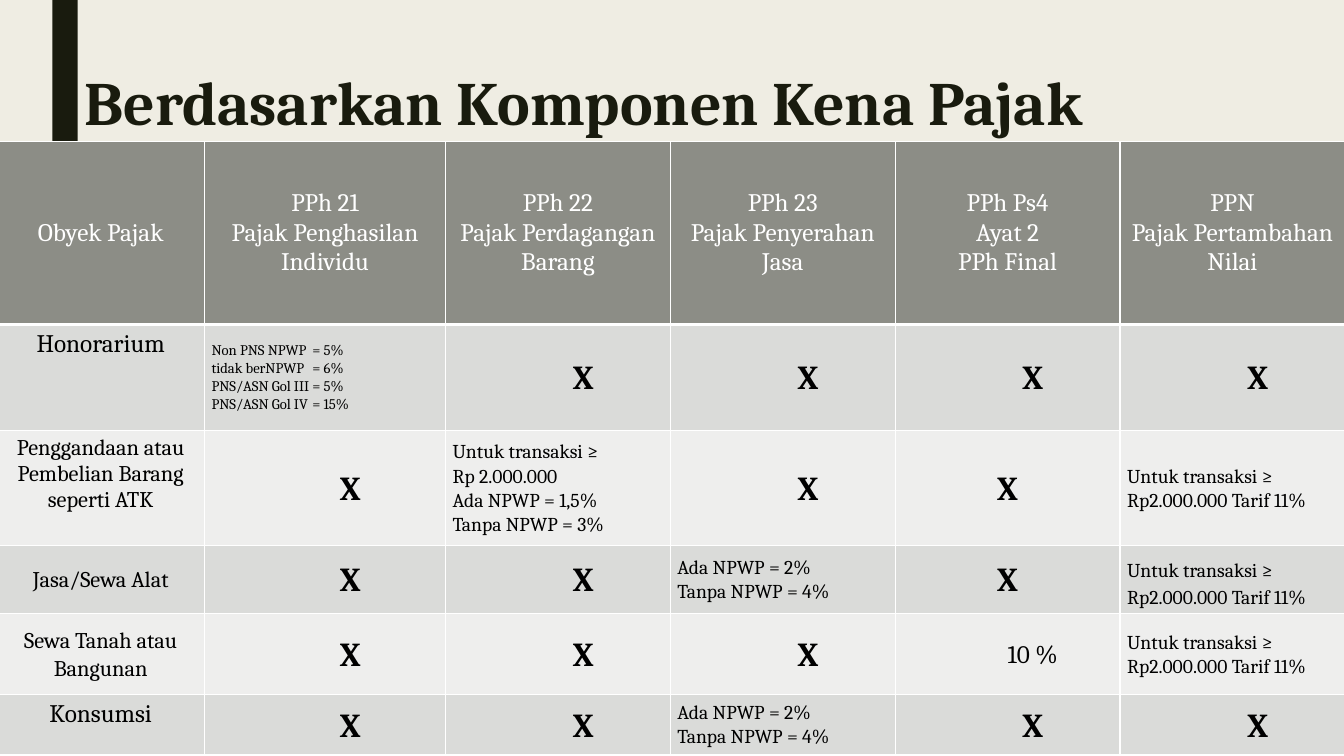
import dataclasses

import lxml.etree
import pptx
import pptx.dml.color
import pptx.enum.shapes
import pptx.enum.text
import pptx.oxml.ns
import pptx.util

RGBColor = pptx.dml.color.RGBColor
ALIGN = pptx.enum.text.PP_ALIGN
ANCHOR = pptx.enum.text.MSO_ANCHOR
qn = pptx.oxml.ns.qn

INK = RGBColor(0x19, 0x1B, 0x0E)
PAPER = RGBColor(0xEF, 0xED, 0xE3)
BLACK = RGBColor(0x00, 0x00, 0x00)
WHITE = RGBColor(0xFF, 0xFF, 0xFF)
STONE = RGBColor(0x8C, 0x8D, 0x86)
BANDS = (RGBColor(0xDA, 0xDB, 0xD9), RGBColor(0xEE, 0xEE, 0xED))

FONT = "Cambria"
WIDE = pptx.util.Inches(13.33)
HIGH = pptx.util.Inches(7.5)
COLS = (15.45, 17.93) + (16.73,) * 4
ROWS = (24.27, 14, 15.2, 9.07, 10.67, 8)
TOP = 18.67


@dataclasses.dataclass(frozen=True)
class Style:
    size: float
    color: RGBColor = BLACK
    bold: bool = False
    align: ALIGN = ALIGN.CENTER
    anchor: ANCHOR = ANCHOR.MIDDLE
    inset: tuple = (0.07, 0)
    indent: float = 0
    lead: float = 1.07


TITLE = Style(44, INK, True, ALIGN.LEFT, inset=(0.1, 0.05), lead=0.89)
HEAD = Style(18, WHITE, inset=(0.1, 0.05), lead=1)
NAME = Style(18, anchor=ANCHOR.TOP, inset=(0.1, 0.05), lead=1)
LONG = dataclasses.replace(NAME, size=16)
ITEM = Style(16, inset=(0, 0))
NOTE = Style(14, align=ALIGN.LEFT)
FINE = dataclasses.replace(NOTE, size=10.5)
MARK = Style(24, bold=True, indent=0.5)
RATE = Style(18, indent=0.5)

NO = (MARK, "X")
MID = (dataclasses.replace(MARK, indent=0), "X")
FEE = (NOTE, "Ada NPWP = 2%\nTanpa NPWP = 4%")
FROM = "Untuk transaksi ≥"
VAT = "Rp2.000.000 Tarif 11%"

HEADS = (
    "Obyek Pajak",
    "PPh 21\nPajak Penghasilan Individu",
    "PPh 22\nPajak Perdagangan Barang",
    "PPh 23\nPajak Penyerahan Jasa",
    "PPh Ps4\nAyat 2\nPPh Final",
    "PPN\nPajak Pertambahan Nilai",
)
WAGES = "Non PNS NPWP\t= 5%\ntidak berNPWP\t= 6%\nPNS/ASN Gol III\t= 5%\nPNS/ASN Gol IV\t= 15%"
GOODS = FROM + "\nRp 2.000.000\nAda NPWP = 1,5%\nTanpa NPWP = 3%"
BODY = (
    ((NAME, "Honorarium"), (FINE, WAGES), NO, NO, NO, NO),
    ((LONG, "Penggandaan atau Pembelian Barang seperti ATK"),
     NO, (NOTE, GOODS), NO, MID, (NOTE, FROM + "\n" + VAT)),
    ((ITEM, "Jasa/Sewa Alat"), NO, NO, FEE, MID,
     (NOTE, ((FROM, 14), (" ", 20), (VAT, 14)))),
    ((ITEM, "Sewa Tanah atau Bangunan"), NO, NO, NO,
     (RATE, "10 %"), (NOTE, FROM + " " + VAT)),
    ((NAME, "Konsumsi"), NO, NO, FEE, NO, NO),
)


def across(share):
    return round(WIDE * share / 100)


def down(share):
    return round(HIGH * share / 100)


def add_run(para, text, size, style):
    run = para.add_run()
    run.text = text
    font = run.font
    font.name, font.size, font.bold = FONT, pptx.util.Pt(size), style.bold
    font.color.rgb = style.color


def write(frame, text, style):
    if isinstance(text, str):
        paras = [((line, style.size),) for line in text.split("\n")]
    else:
        paras = [text]
    for num, runs in enumerate(paras):
        para = frame.add_paragraph() if num else frame.paragraphs[0]
        para.alignment = style.align
        para.line_spacing = style.lead
        if style.indent:
            props = para._p.get_or_add_pPr()
            props.set("marL", str(pptx.util.Inches(style.indent)))
            props.set("indent", "0")
        for words, size in runs:
            add_run(para, words, size, style)


def set_box(box, style):
    side, edge = (pptx.util.Inches(gap) for gap in style.inset)
    box.margin_left = box.margin_right = side
    box.margin_top = box.margin_bottom = edge
    box.vertical_anchor = style.anchor


def add_edge(cell, tag, points):
    props = cell._tc.get_or_add_tcPr()
    line = lxml.etree.SubElement(props, qn(tag), w=str(pptx.util.Pt(points)))
    fill = lxml.etree.SubElement(line, qn("a:solidFill"))
    lxml.etree.SubElement(fill, qn("a:srgbClr"), val=str(WHITE))


def fill_cell(cell, text, style, color, base):
    set_box(cell, style)
    for tag in ("a:lnL", "a:lnR", "a:lnT"):
        add_edge(cell, tag, 1)
    add_edge(cell, "a:lnB", base)
    cell.fill.solid()
    cell.fill.fore_color.rgb = color
    write(cell.text_frame, text, style)


def add_bar(slide):
    bar = slide.shapes.add_shape(
        pptx.enum.shapes.MSO_SHAPE.RECTANGLE, across(3.9), 0, across(1.88), HIGH)
    bar.shadow.inherit = False
    bar.fill.solid()
    bar.fill.fore_color.rgb = INK
    bar.line.fill.background()


def add_title(slide, text):
    box = slide.shapes.add_textbox(across(5.55), down(8.4), across(78.84), down(11.07))
    box.text_frame.word_wrap = True
    set_box(box.text_frame, TITLE)
    write(box.text_frame, text, TITLE)


def add_grid(slide):
    grid = slide.shapes.add_table(
        len(ROWS), len(COLS), across(-0.23), down(TOP),
        across(sum(COLS)), down(sum(ROWS))).table
    grid.first_row = grid.horz_banding = False
    for col, share in zip(grid.columns, COLS):
        col.width = across(share)
    for row, share in zip(grid.rows, ROWS):
        row.height = down(share)
    for col, text in enumerate(HEADS):
        fill_cell(grid.cell(0, col), text, HEAD, STONE, 3)
    for row, items in enumerate(BODY):
        for col, (style, text) in enumerate(items):
            fill_cell(grid.cell(row + 1, col), text, style, BANDS[row % 2], 1)


def main():
    deck = pptx.Presentation()
    deck.slide_width, deck.slide_height = WIDE, HIGH
    slide = deck.slides.add_slide(deck.slide_layouts[6])
    slide.background.fill.solid()
    slide.background.fill.fore_color.rgb = PAPER
    add_bar(slide)
    add_title(slide, "Berdasarkan Komponen Kena Pajak")
    add_grid(slide)
    deck.save("out.pptx")


if __name__ == "__main__":
    main()
